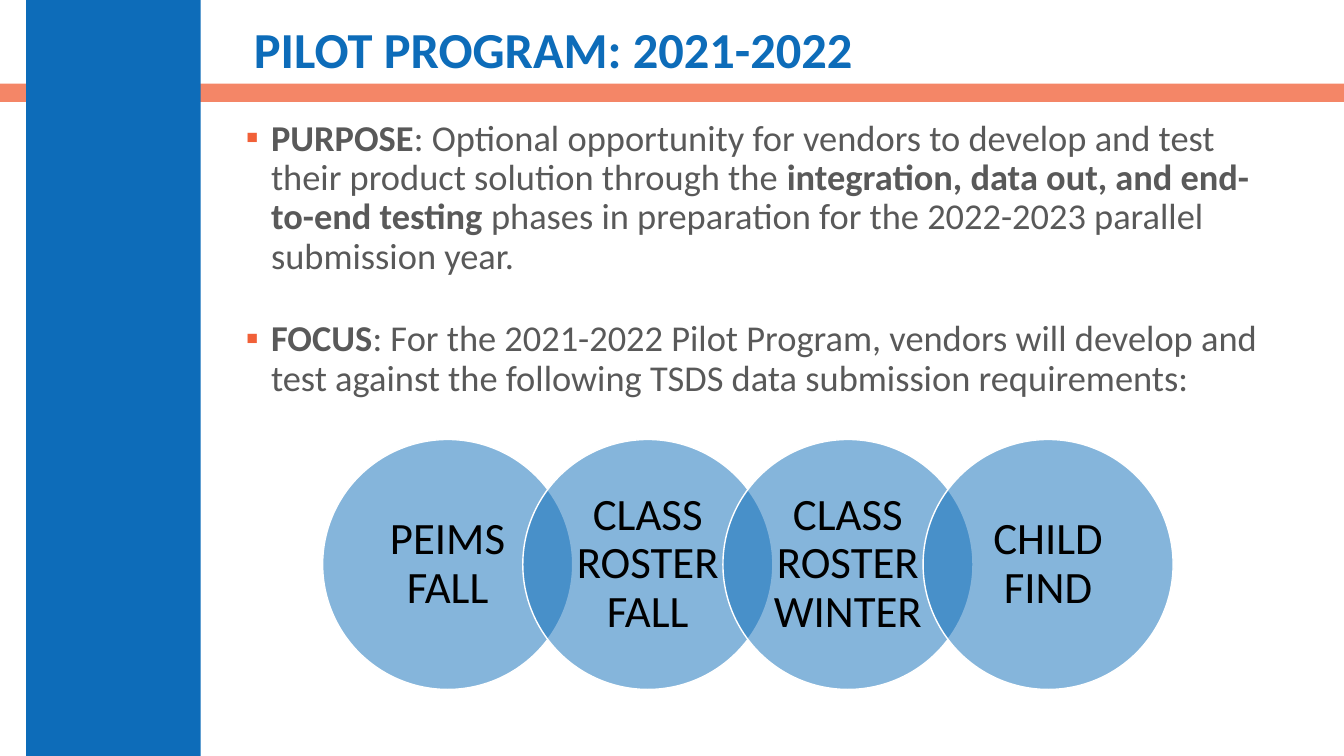
from lxml.etree import SubElement
from pptx import Presentation
from pptx.dml.color import RGBColor
from pptx.enum.shapes import MSO_SHAPE
from pptx.enum.text import MSO_ANCHOR, PP_ALIGN
from pptx.oxml.ns import qn
from pptx.util import Inches, Pt

TITLE = "PILOT PROGRAM: 2021-2022"
BULLETS = [
    [
        ("PURPOSE", True),
        (": Optional opportunity for vendors to develop and test their product "
         "solution through the ", False),
        ("integration, data out, and end-to-end testing ", True),
        ("phases in preparation for the 2022-2023 parallel submission year.", False),
    ],
    [
        ("FOCUS", True),
        (": For the 2021-2022 Pilot Program, vendors will develop and test against "
         "the following TSDS data submission requirements:", False),
    ],
]
SUBMISSIONS = ["PEIMS FALL", "CLASS ROSTER FALL", "CLASS ROSTER WINTER", "CHILD FIND"]
COLORS = {"blue": "0D6CB9", "orange": "F16038", "gray": "595959",
          "black": "000000", "white": "FFFFFF"}
FONT = "Calibri"
CIRCLE_LEFT, CIRCLE_TOP, CIRCLE_SIZE, CIRCLE_STEP = 3.2, 4.36, 2.48, 1.985


def color(name):
    return RGBColor.from_string(COLORS[name])


def add_bullet(para):
    properties = para._p.get_or_add_pPr()
    properties.set("marL", str(Inches(0.25)))
    properties.set("indent", str(-Inches(0.25)))
    bullet_color = SubElement(properties, qn("a:buClr"))
    SubElement(bullet_color, qn("a:srgbClr"), val=COLORS["orange"])
    SubElement(properties, qn("a:buFont"), typeface=FONT)
    SubElement(properties, qn("a:buChar"), char="▪")


def write(shape, paragraphs, size, ink, align=PP_ALIGN.LEFT, anchor=MSO_ANCHOR.TOP,
          margins=(0.1, 0.05), bullets=False, gap=0):
    frame = shape.text_frame
    frame.word_wrap = True
    frame.vertical_anchor = anchor
    frame.margin_left = frame.margin_right = Inches(margins[0])
    frame.margin_top = frame.margin_bottom = Inches(margins[1])
    for index, spans in enumerate(paragraphs):
        para = frame.add_paragraph() if index else frame.paragraphs[0]
        if bullets:
            add_bullet(para)
        para.alignment = align
        para.line_spacing = 0.9
        para.space_before = Pt(gap if index else 0)
        for text, bold in spans:
            span = para.add_run()
            span.text = text
            span.font.name = FONT
            span.font.size = Pt(size)
            span.font.bold = bold
            span.font.color.rgb = color(ink)


def add_box(page, left, top, width, height):
    return page.shapes.add_textbox(Inches(left), Inches(top), Inches(width), Inches(height))


def add_filled(page, kind, left, top, width, height, fill, opacity=100, outline=None):
    shape = page.shapes.add_shape(kind, Inches(left), Inches(top), Inches(width), Inches(height))
    shape.shadow.inherit = False
    shape.fill.solid()
    shape.fill.fore_color.rgb = color(fill)
    if opacity < 100:
        tone = shape._element.spPr.find(qn("a:solidFill")).find(qn("a:srgbClr"))
        SubElement(tone, qn("a:alpha"), val=str(opacity * 1000))
    if outline:
        shape.line.color.rgb = color(outline)
        shape.line.width = Pt(1)
    else:
        shape.line.fill.background()
    return shape


def main():
    deck = Presentation()
    deck.slide_width, deck.slide_height = Inches(13.33), Inches(7.5)
    page = deck.slides.add_slide(deck.slide_layouts[6])

    add_filled(page, MSO_SHAPE.RECTANGLE, 0, 0.83, 13.33, 0.18, "orange", opacity=76)
    add_filled(page, MSO_SHAPE.RECTANGLE, 0.26, 0, 1.73, 7.5, "blue")

    title = add_box(page, 2.42, 0.22, 10.41, 0.59)
    write(title, [[(TITLE, True)]], 36, "blue", anchor=MSO_ANCHOR.MIDDLE)

    body = add_box(page, 2.34, 1.14, 10.38, 3.1)
    write(body, BULLETS, 26, "gray", bullets=True, gap=31)

    for index, label in enumerate(SUBMISSIONS):
        circle = add_filled(page, MSO_SHAPE.OVAL, CIRCLE_LEFT + index * CIRCLE_STEP, CIRCLE_TOP,
                            CIRCLE_SIZE, CIRCLE_SIZE, "blue", opacity=50, outline="white")
        write(circle, [[(label, False)]], 32, "black", align=PP_ALIGN.CENTER,
              anchor=MSO_ANCHOR.MIDDLE, margins=(0.12, 0.04))

    deck.save("out.pptx")


if __name__ == "__main__":
    main()
